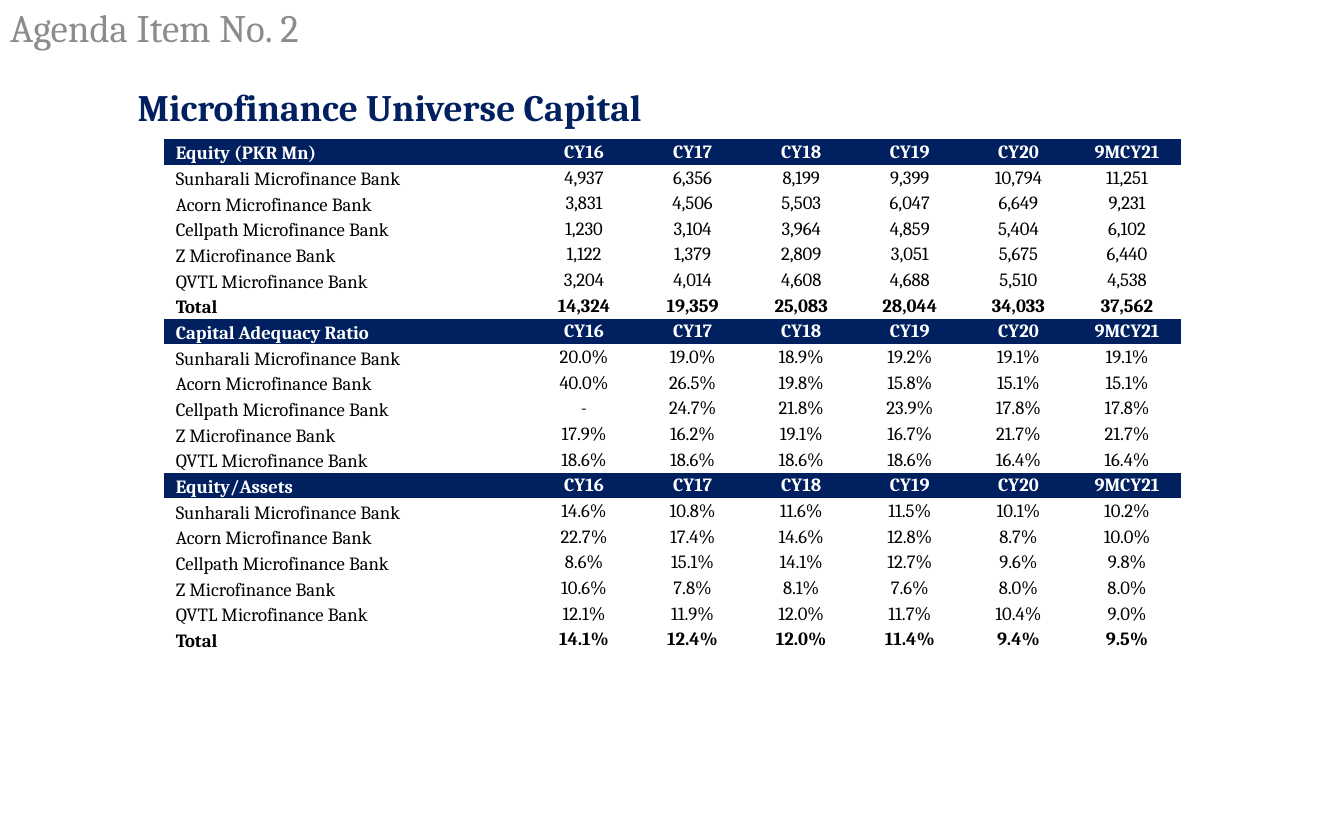
from pptx import Presentation
from pptx.dml.color import RGBColor
from pptx.enum.text import MSO_ANCHOR as Anchor, PP_ALIGN as Align
from pptx.util import Inches, Pt

COLORS = {"navy": "002060", "white": "FFFFFF", "black": "000000", "grey": "8C8C8C"}
FONT = "Cambria"
PLAIN_TABLE_STYLE = "{2D5ABB26-0587-4C30-8999-92F81FD0307C}"

YEARS = "CY16 CY17 CY18 CY19 CY20 9MCY21"
BANKS = [f"{name} Microfinance Bank"
         for name in ("Sunharali", "Acorn", "Cellpath", "Z", "QVTL")]
TOTAL = "Total"
# Section title, body fill, values by bank and, where given, the total
SECTIONS = [
    ("Equity (PKR Mn)", "white", [
        "4,937 6,356 8,199 9,399 10,794 11,251",
        "3,831 4,506 5,503 6,047 6,649 9,231",
        "1,230 3,104 3,964 4,859 5,404 6,102",
        "1,122 1,379 2,809 3,051 5,675 6,440",
        "3,204 4,014 4,608 4,688 5,510 4,538",
        "14,324 19,359 25,083 28,044 34,033 37,562"]),
    ("Capital Adequacy Ratio", None, [
        "20.0% 19.0% 18.9% 19.2% 19.1% 19.1%",
        "40.0% 26.5% 19.8% 15.8% 15.1% 15.1%",
        "- 24.7% 21.8% 23.9% 17.8% 17.8%",
        "17.9% 16.2% 19.1% 16.7% 21.7% 21.7%",
        "18.6% 18.6% 18.6% 18.6% 16.4% 16.4%"]),
    ("Equity/Assets", "white", [
        "14.6% 10.8% 11.6% 11.5% 10.1% 10.2%",
        "22.7% 17.4% 14.6% 12.8% 8.7% 10.0%",
        "8.6% 15.1% 14.1% 12.7% 9.6% 9.8%",
        "10.6% 7.8% 8.1% 7.6% 8.0% 8.0%",
        "12.1% 11.9% 12.0% 11.7% 10.4% 9.0%",
        "14.1% 12.4% 12.0% 11.4% 9.4% 9.5%"]),
]


def style_text(paragraph, size, color, bold=False):
    font = paragraph.font
    font.name, font.size, font.bold = FONT, Pt(size), bold
    font.color.rgb = RGBColor.from_string(COLORS[color])


presentation = Presentation()
presentation.slide_width, presentation.slide_height = Inches(12), Inches(7.5)
slide = presentation.slides.add_slide(presentation.slide_layouts[5])

# Heading above the table
heading = slide.shapes.add_textbox(Inches(1.13), Inches(0.65), Inches(5.9), Inches(0.6))
heading.text_frame.word_wrap = True
heading.text_frame.vertical_anchor = Anchor.MIDDLE
paragraph = heading.text_frame.paragraphs[0]
paragraph.text = "Microfinance Universe Capital"
style_text(paragraph, 24, "navy", bold=True)

# Table rows: label, values, fill, text color, bold
rows = []
for section_title, fill, lines in SECTIONS:
    rows.append((section_title, YEARS, "navy", "white", True))
    for label, values in zip(BANKS + [TOTAL], lines):
        rows.append((label, values, fill, "black", label == TOTAL))

# Capital table
label_width, year_width = Inches(3.27), Inches(0.97)
year_count = len(YEARS.split())
frame = slide.shapes.add_table(
    len(rows), year_count + 1, Inches(1.46), Inches(1.24),
    label_width + year_count * year_width, Inches(4.59))
frame._element.graphic.graphicData.tbl.tblPr.find(
    "{*}tableStyleId").text = PLAIN_TABLE_STYLE
table = frame.table
table.first_row = table.horz_banding = False
for index, column in enumerate(table.columns):
    column.width = year_width if index else label_width

for row_index, (label, values, fill, color, bold) in enumerate(rows):
    for column_index, text in enumerate([label] + values.split()):
        cell = table.cell(row_index, column_index)
        cell.margin_left = cell.margin_right = cell.margin_top = Inches(0.01)
        cell.margin_bottom = 0
        if fill:
            cell.fill.solid()
            cell.fill.fore_color.rgb = RGBColor.from_string(COLORS[fill])
        else:
            cell.fill.background()
        paragraph = cell.text_frame.paragraphs[0]
        paragraph.text = text
        if column_index:
            cell.vertical_anchor = Anchor.MIDDLE
            paragraph.alignment = Align.CENTER
        else:
            cell.vertical_anchor = Anchor.BOTTOM
            paragraph._p.get_or_add_pPr().set("marL", str(Inches(0.1)))
        style_text(paragraph, 12, color, bold)

# Agenda title in the corner
title = slide.shapes.title
title.left, title.top = Inches(-0.01), Inches(0.01)
title.width, title.height = Inches(3.21), Inches(0.51)
title.text_frame.vertical_anchor = Anchor.MIDDLE
paragraph = title.text_frame.paragraphs[0]
paragraph.text = "Agenda Item No. 2"
paragraph.alignment = Align.LEFT
paragraph.line_spacing = 0.9
style_text(paragraph, 25, "grey")

presentation.save("out.pptx")
